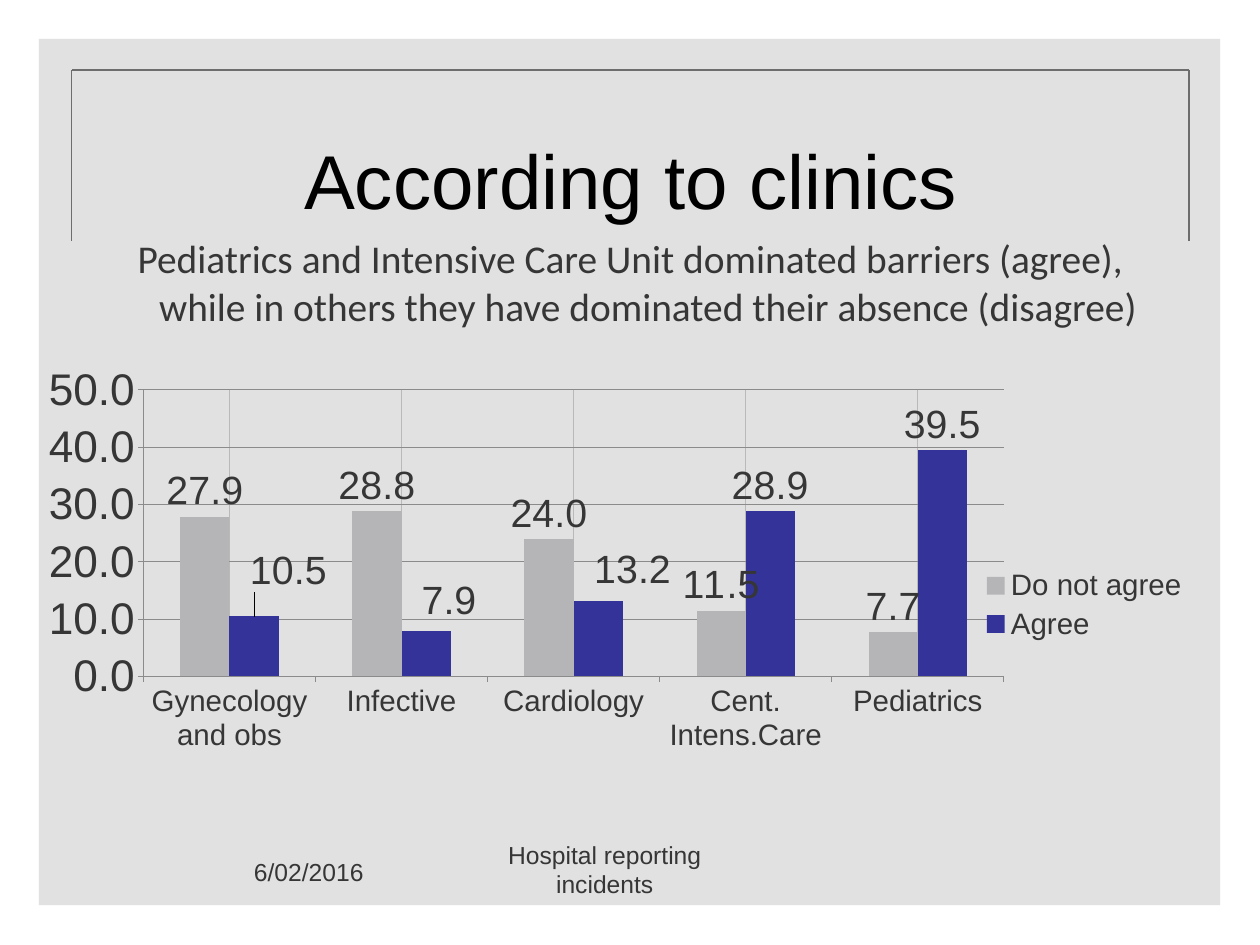
from dataclasses import dataclass

from lxml import etree
from pptx import Presentation
from pptx import util as u
from pptx.chart.data import CategoryChartData
from pptx.dml.color import RGBColor
from pptx.enum import chart as ch, shapes, text
from pptx.oxml import parse_xml
from pptx.oxml.ns import nsdecls, qn


@dataclass(frozen=True)
class Theme:
    panel: str = "B5B5B7"
    agree: str = "333399"
    ink: str = "363636"
    title_ink: str = "000000"
    frame: str = "6D6D6D"
    axis: str = "8B8B8B"
    minor_grid: str = "B9B9B9"
    sans: str = "Arial"
    body: str = "Calibri"
    title_size: int = 62
    axis_size: int = 36
    body_size: int = 32
    label_size: int = 24
    footer_size: int = 20


def layout_xml(x, y, w=None, h=None, inner=False):
    """Manual chart layout, in fractions of the chart area."""
    parts = ['<c:layoutTarget val="inner"/>'] if inner else []
    if w is not None:
        parts += ['<c:xMode val="edge"/>', '<c:yMode val="edge"/>']
    sizes = {"x": x, "y": y, "w": w, "h": h}
    parts += [f'<c:{k} val="{v}"/>' for k, v in sizes.items() if v is not None]
    return parse_xml(f'<c:layout {nsdecls("c")}><c:manualLayout>'
                     f'{"".join(parts)}</c:manualLayout></c:layout>')


def place(parent, layout, after=None):
    """Put a layout into a chart part, replacing any it already has."""
    for old in parent.findall(qn("c:layout")):
        parent.remove(old)
    if after:
        parent.find(qn(after)).addnext(layout)
    else:
        parent.insert(0, layout)


class ClinicSlide:
    def __init__(self, slide, theme):
        self.slide, self.theme = slide, theme

    def style(self, font, size, color=None, face=None):
        font.size = u.Pt(size)
        font.name = face or self.theme.sans
        font.color.rgb = RGBColor.from_string(color or self.theme.ink)

    def line(self, fmt, color, width):
        fmt.color.rgb = RGBColor.from_string(color)
        fmt.width = u.Pt(width)

    def panel(self, box, color, opacity):
        panel = self.slide.shapes.add_shape(
            shapes.MSO_SHAPE.RECTANGLE, *map(u.Inches, box))
        panel.shadow.inherit = False
        panel.line.fill.background()
        panel.fill.solid()
        panel.fill.fore_color.rgb = RGBColor.from_string(color)
        tint = panel._element.spPr.find(".//" + qn("a:srgbClr"))
        etree.SubElement(tint, qn("a:alpha")).set("val", str(opacity * 1000))

    def rule(self, *ends):
        rule = self.slide.shapes.add_connector(
            shapes.MSO_CONNECTOR.STRAIGHT, *map(u.Inches, ends))
        self.line(rule.line, self.theme.frame, 1)
        etree.SubElement(rule._element.spPr, qn("a:effectLst"))

    def text(self, words, box, size, color=None, face=None):
        frame = self.slide.shapes.add_textbox(*map(u.Inches, box)).text_frame
        frame.word_wrap = True
        paragraph = frame.paragraphs[0]
        paragraph.text = words
        paragraph.alignment = text.PP_ALIGN.CENTER
        self.style(paragraph.font, size, color, face)
        return frame

    def columns(self, box, categories, series, plot, legend_area, shifts):
        t = self.theme
        data = CategoryChartData(number_format="0.0")
        data.categories = categories
        for name, values, _ in series:
            data.add_series(name, values)
        chart = self.slide.shapes.add_chart(
            ch.XL_CHART_TYPE.COLUMN_CLUSTERED, *map(u.Inches, box), data).chart
        chart.has_title = False
        self.style(chart.font, t.axis_size)
        place(chart._chartSpace.chart.plotArea, layout_xml(*plot, inner=True))

        # Axes and grid
        for axis, size in ((chart.category_axis, t.label_size),
                           (chart.value_axis, t.axis_size)):
            axis.major_tick_mark = ch.XL_TICK_MARK.OUTSIDE
            self.style(axis.tick_labels.font, size)
            self.line(axis.format.line, t.axis, 0.75)
        clinics, percent = chart.category_axis, chart.value_axis
        clinics.has_minor_gridlines = True
        clinics._element.find(qn("c:minorGridlines")).append(parse_xml(
            f'<c:spPr {nsdecls("c", "a")}><a:ln w="{u.Pt(0.75)}"><a:solidFill>'
            f'<a:srgbClr val="{t.minor_grid}"/></a:solidFill></a:ln></c:spPr>'))
        percent.minimum_scale, percent.maximum_scale = 0, 50
        percent.major_unit = 10
        percent.tick_labels.number_format = "0.0"
        percent.tick_labels.number_format_is_linked = False
        self.line(percent.major_gridlines.format.line, t.axis, 0.75)

        # Legend
        chart.has_legend = True
        chart.legend.position = ch.XL_LEGEND_POSITION.RIGHT
        chart.legend.include_in_layout = False
        self.style(chart.legend.font, t.label_size)
        place(chart.legend._element, layout_xml(*legend_area), "c:legendPos")

        # Columns and value labels
        bars = chart.plots[0]
        bars.gap_width, bars.overlap, bars.vary_by_categories = 150, 0, False
        for column, (_, _, color) in zip(bars.series, series):
            column.format.fill.solid()
            column.format.fill.fore_color.rgb = RGBColor.from_string(color)
            column.invert_if_negative = False
            labels = column.data_labels
            labels.show_value = True
            labels.number_format = "0.0"
            labels.number_format_is_linked = False
            labels.position = ch.XL_LABEL_POSITION.OUTSIDE_END
            self.style(labels.font, t.body_size)

        # Labels of the short "Agree" columns, moved aside
        agree = bars.series[1]
        for i, shift in enumerate(shifts):
            label = agree.points[i].data_label
            label.position = ch.XL_LABEL_POSITION.OUTSIDE_END
            self.style(label.font, t.body_size)
            place(agree.data_labels._element.findall(qn("c:dLbl"))[i],
                  layout_xml(*shift), "c:idx")


def main():
    theme = Theme()
    deck = Presentation()
    deck.slide_width, deck.slide_height = u.Inches(14.22), u.Inches(10.67)
    page = ClinicSlide(deck.slides.add_slide(deck.slide_layouts[6]), theme)

    # Background panel and open frame
    page.panel((0.44, 0.44, 13.33, 9.78), theme.panel, 40)
    left, right, top, bottom = 0.81, 13.42, 0.79, 2.72
    for x in (left, right):
        page.rule(x, bottom, x, top)
    page.rule(right, top, left, top)

    # Title
    title = page.text("According to clinics", (1.15, 1.25, 11.94, 1.34),
                      theme.title_size, theme.title_ink)
    title.vertical_anchor = text.MSO_ANCHOR.MIDDLE
    title.margin_left = title.margin_right = 0
    title.margin_top = title.margin_bottom = 0
    title.paragraphs[0].line_spacing = 1.2

    # Date and footer
    page.text("6/02/2016", (2.32, 9.63, 2.33, 0.4), theme.footer_size)
    page.text("Hospital reporting incidents", (5.24, 9.43, 3.17, 0.4),
              theme.footer_size)

    # Finding, with a hanging indent
    finding = page.text(
        "Pediatrics and Intensive Care Unit dominated barriers (agree), "
        "while in others they have dominated their absence (disagree)",
        (1.15, 2.6, 11.94, 1.34), theme.body_size, face=theme.body)
    hanging = finding.paragraphs[0]._p.get_or_add_pPr()
    hanging.set("marL", str(u.Inches(0.4)))
    hanging.set("indent", str(u.Inches(-0.4)))

    # Answers by clinic
    page.columns(
        (0.55, 3.94, 12.98, 5.78),
        ["Gynecology and obs", "Infective", "Cardiology",
         "Cent. Intens.Care", "Pediatrics"],
        [("Do not agree", (27.9, 28.8, 24.0, 11.5, 7.7), theme.panel),
         ("Agree", (10.5, 7.9, 13.2, 28.9, 39.5), theme.agree)],
        plot=(0.08, 0.08, 0.75, 0.56),
        legend_area=(0.81, 0.42, 0.18, 0.16),
        shifts=[(0.03, -0.04), (0.02, -0.01), (0.03, -0.01)])

    deck.save("out.pptx")


if __name__ == "__main__":
    main()
